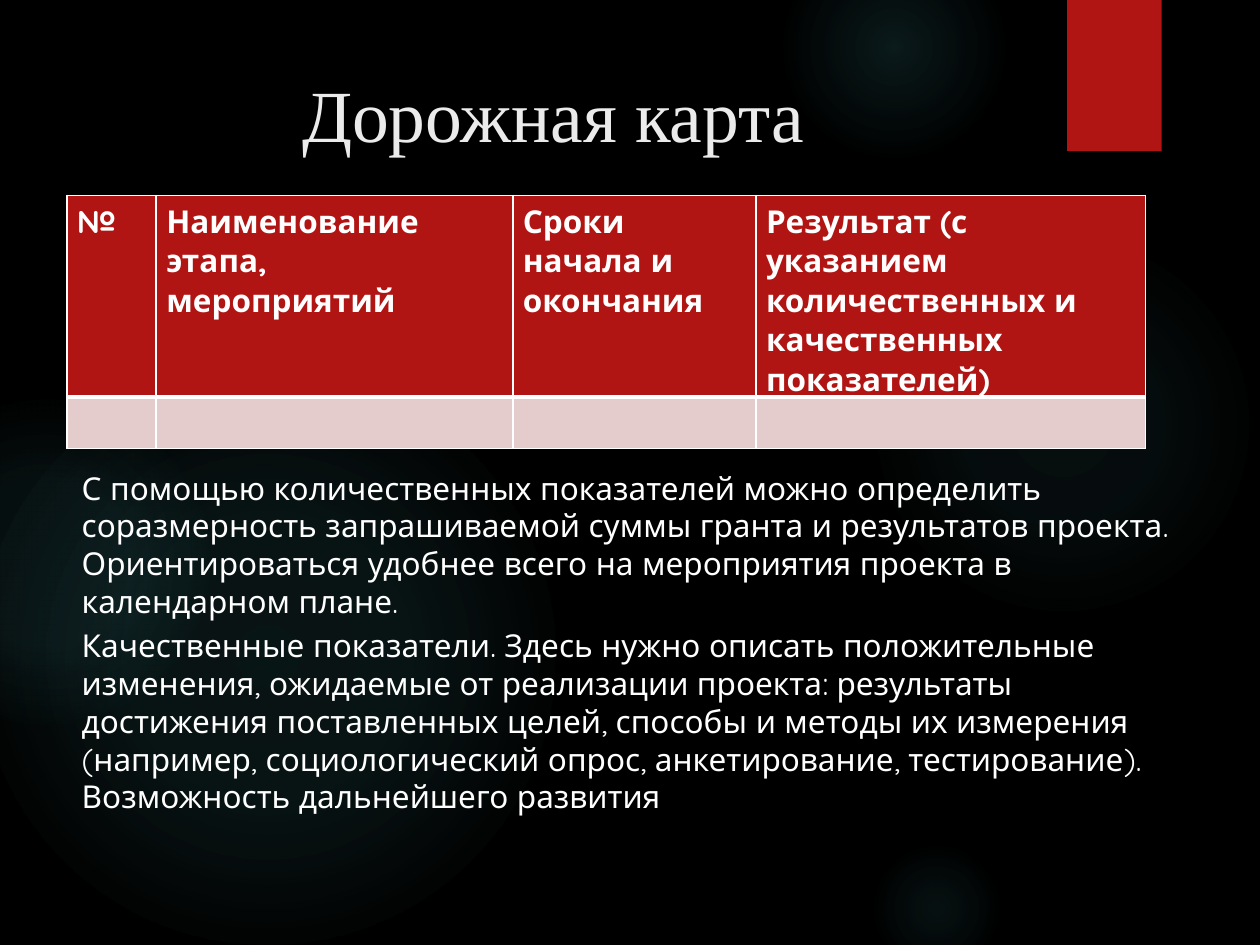
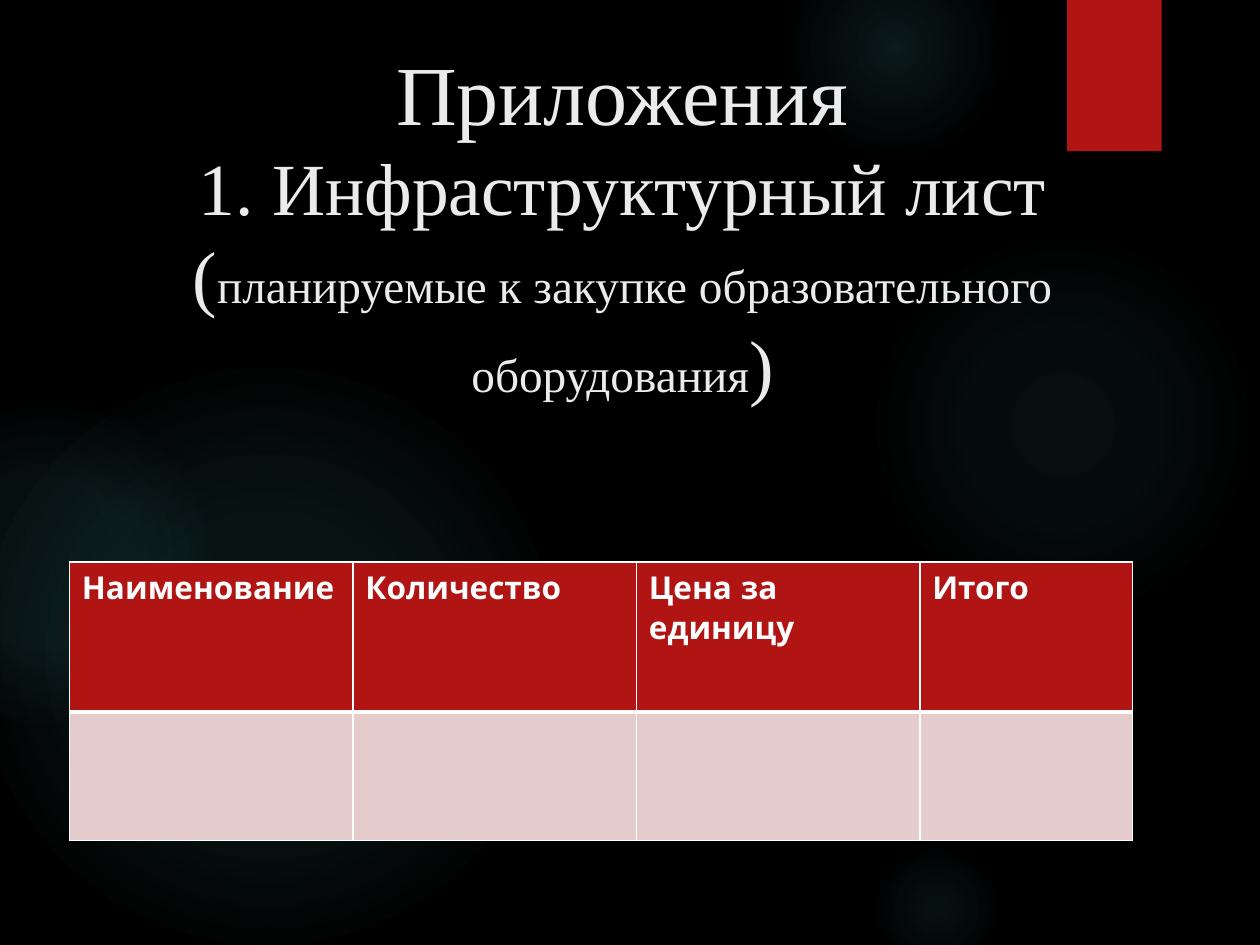
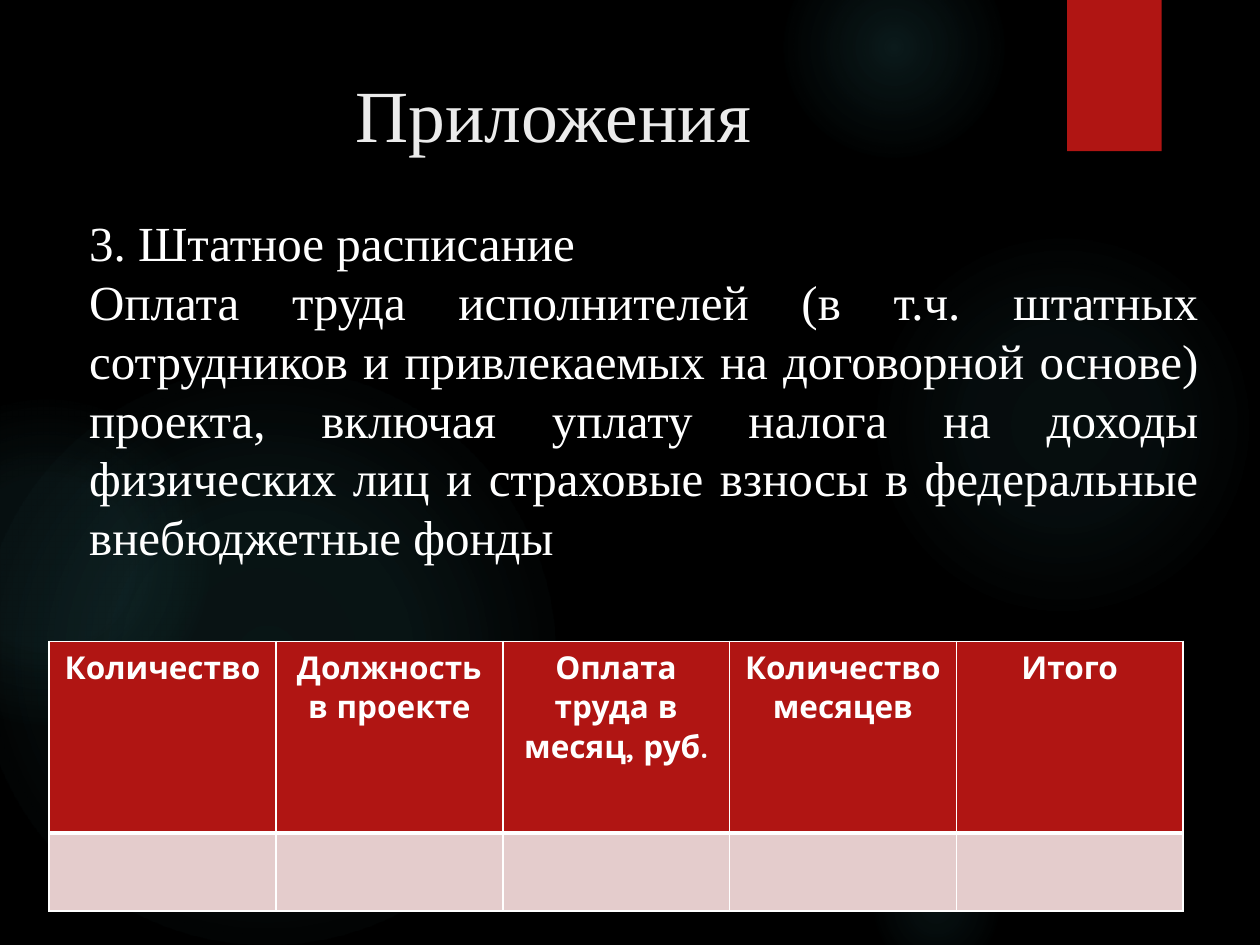
from dataclasses import dataclass

from lxml import etree
from pptx import Presentation
from pptx.dml.color import RGBColor
from pptx.enum.shapes import MSO_SHAPE
from pptx.enum.text import MSO_ANCHOR, PP_ALIGN
from pptx.oxml import parse_xml
from pptx.oxml.ns import nsdecls, qn
from pptx.util import Inches, Pt


@dataclass(frozen=True)
class Theme:
    back: str = "000000"
    glow: str = "50B9C1"
    accent: str = "B01513"
    row: str = "E4CCCC"
    title: str = "EBEBEB"
    text: str = "FFFFFF"
    serif: str = "Times New Roman"
    sans: str = "Quicksand"
    display: int = 48
    heading: int = 42
    subtitle: int = 27
    lead: int = 28
    body: int = 18
    leading: float = 1.2


THEME = Theme()

# Left, top, diameter and (position, opacity) stops in percent
GLOWS = [
    (6.89, 1.83, 3.08, [(0, 7), (36, 6), (69, 0)]),
    (6.22, -0.5, 1.75, [(0, 14), (36, 7), (73, 0)]),
    (6.89, 6.67, 1.08, [(0, 9), (36, 5), (66, 0)]),
    (-0.17, 2.92, 4.58, [(0, 11), (36, 10), (75, 0)]),
    (-0.92, 3.17, 2.58, [(0, 8), (36, 8), (72, 0)]),
]
TITLE_BOX = (0.53, 0.5, 7.72, 1.53)


def rgb(color):
    return RGBColor.from_string(color)


def set_font(font, name, size, color, bold=False):
    font.name, font.size, font.bold = name, Pt(size), bold
    font.color.rgb = rgb(color)


def add_plain_shape(slide, kind, x, y, w, h):
    sp = slide.shapes.add_shape(kind, Inches(x), Inches(y), Inches(w), Inches(h))
    sp.shadow.inherit = False
    sp.line.fill.background()
    return sp


def add_glow(slide, x, y, size, stops):
    sp = add_plain_shape(slide, MSO_SHAPE.OVAL, x, y, size, size)
    gs = "".join(
        f'<a:gs pos="{pos * 1000}"><a:srgbClr val="{THEME.glow}">'
        f'<a:alpha val="{alpha * 1000}"/></a:srgbClr></a:gs>'
        for pos, alpha in stops)
    grad = parse_xml(
        f'<a:gradFill {nsdecls("a")} rotWithShape="1"><a:gsLst>{gs}</a:gsLst>'
        '<a:path path="circle"><a:fillToRect l="50000" t="50000" r="50000" b="50000"/>'
        '</a:path></a:gradFill>')
    sp.element.spPr.find(qn("a:prstGeom")).addnext(grad)


def add_slide(prs):
    """Blank slide with the glows and the red bookmark."""
    slide = prs.slides.add_slide(prs.slide_layouts[6])
    for glow in GLOWS:
        add_glow(slide, *glow)
    bookmark = add_plain_shape(slide, MSO_SHAPE.RECTANGLE, 8.47, 0, 0.75, 1.2)
    bookmark.fill.solid()
    bookmark.fill.fore_color.rgb = rgb(THEME.accent)
    return slide


def add_text(slide, box, paragraphs, name, color, align=PP_ALIGN.LEFT):
    """Each paragraph is a list of (text, size) runs."""
    tf = slide.shapes.add_textbox(*map(Inches, box)).text_frame
    tf.word_wrap = True
    tf.vertical_anchor = MSO_ANCHOR.TOP
    for i, runs in enumerate(paragraphs):
        p = tf.add_paragraph() if i else tf.paragraphs[0]
        size = max(run_size for _, run_size in runs)
        p.alignment = align
        p.line_spacing = Pt(round(size * THEME.leading, 1))
        set_font(p.font, name, size, color)
        for text, run_size in runs:
            r = p.add_run()
            r.text = text
            if run_size != size:
                r.font.size = Pt(run_size)


def add_title(slide, paragraphs, box=TITLE_BOX):
    add_text(slide, box, paragraphs, THEME.serif, THEME.title, PP_ALIGN.CENTER)


def style_cell(cell, fill, top, bottom):
    cell.fill.solid()
    cell.fill.fore_color.rgb = rgb(fill)
    tcPr = cell._tc.get_or_add_tcPr()
    borders = {"lnL": 1, "lnR": 1, "lnT": top, "lnB": bottom}
    for i, (tag, width) in enumerate(borders.items()):
        ln = etree.Element(qn(f"a:{tag}"), w=str(Pt(width)))
        solid = etree.SubElement(ln, qn("a:solidFill"))
        etree.SubElement(solid, qn("a:srgbClr"), val=THEME.text)
        tcPr.insert(i, ln)


def add_grid(slide, x, y, widths, heights, headers, align=PP_ALIGN.LEFT, inset=0.1):
    """Table with a red header row and one empty row."""
    table = slide.shapes.add_table(
        2, len(headers), Inches(x), Inches(y),
        Inches(sum(widths)), Inches(sum(heights))).table
    for col, width in zip(table.columns, widths):
        col.width = Inches(width)
    for row, height in zip(table.rows, heights):
        row.height = Inches(height)
    for i, header in enumerate(headers):
        head, empty = table.cell(0, i), table.cell(1, i)
        head.text = header
        style_cell(head, THEME.accent, top=1, bottom=3)
        style_cell(empty, THEME.row, top=3, bottom=1)
        for cell in (head, empty):
            cell.margin_left = cell.margin_right = Inches(inset)
            p = cell.text_frame.paragraphs[0]
            p.alignment = align
            set_font(p.font, THEME.sans, THEME.body, THEME.text, bold=True)


def build_roadmap(prs):
    slide = add_slide(prs)
    add_title(slide, [[("Дорожная карта", THEME.heading)]])
    add_grid(slide, 0.53, 1.55, [0.71, 2.83, 1.93, 3.09], [0.41, 0.41], [
        "№",
        "Наименование этапа, мероприятий",
        "Сроки начала и окончания",
        "Результат (с указанием количественных и качественных показателей)",
    ], inset=0.08)
    # Notes under the table
    notes = [
        ((0.55, 3.67, 8.91, 1.01),
         "С помощью количественных показателей можно определить соразмерность "
         "запрашиваемой суммы гранта и результатов проекта. Ориентироваться удобнее "
         "всего на мероприятия проекта в календарном плане."),
        ((0.55, 4.92, 9.06, 1.31),
         "Качественные показатели. Здесь нужно описать положительные изменения, "
         "ожидаемые от реализации проекта: результаты достижения поставленных целей, "
         "способы и методы их измерения (например, социологический опрос, "
         "анкетирование, тестирование). Возможность дальнейшего развития"),
    ]
    for box, note in notes:
        add_text(slide, box, [[(note, THEME.body)]], THEME.sans, THEME.text)


def build_equipment(prs):
    slide = add_slide(prs)
    add_title(slide, [
        [("Приложения", THEME.display)],
        [("1. Инфраструктурный лист (", THEME.heading),
         ("планируемые к закупке образовательного оборудования", THEME.subtitle),
         (")", THEME.heading)],
    ], box=(0.5, 0.28, 8.88, 3.47))
    add_grid(slide, 0.55, 4.46, [2.25, 2.25, 2.25, 1.69], [1.19, 1.02],
             ["Наименование", "Количество", "Цена за единицу", "Итого"])


def build_staff(prs):
    slide = add_slide(prs)
    add_title(slide, [[("Приложения", THEME.heading)]])
    add_grid(slide, 0.39, 5.09, [1.8] * 5, [1.52, 0.62],
             ["Количество", "Должность в проекте", "Оплата труда в месяц, руб.",
              "Количество месяцев", "Итого"], PP_ALIGN.CENTER)
    # Explanation above the table
    add_text(slide, (0.61, 1.64, 9, 2.93), [
        [("3. Штатное расписание", THEME.lead)],
        [("Оплата труда исполнителей (в т.ч. штатных сотрудников и привлекаемых на "
          "договорной основе) проекта, включая уплату налога на доходы физических "
          "лиц и страховые взносы в федеральные внебюджетные фонды", THEME.lead)],
    ], THEME.serif, THEME.text, PP_ALIGN.JUSTIFY)


def main():
    prs = Presentation()
    prs.slide_width, prs.slide_height = Inches(10), Inches(7.5)
    fill = prs.slide_master.background.fill
    fill.solid()
    fill.fore_color.rgb = rgb(THEME.back)
    for build in (build_roadmap, build_equipment, build_staff):
        build(prs)
    prs.save("out.pptx")


if __name__ == "__main__":
    main()
